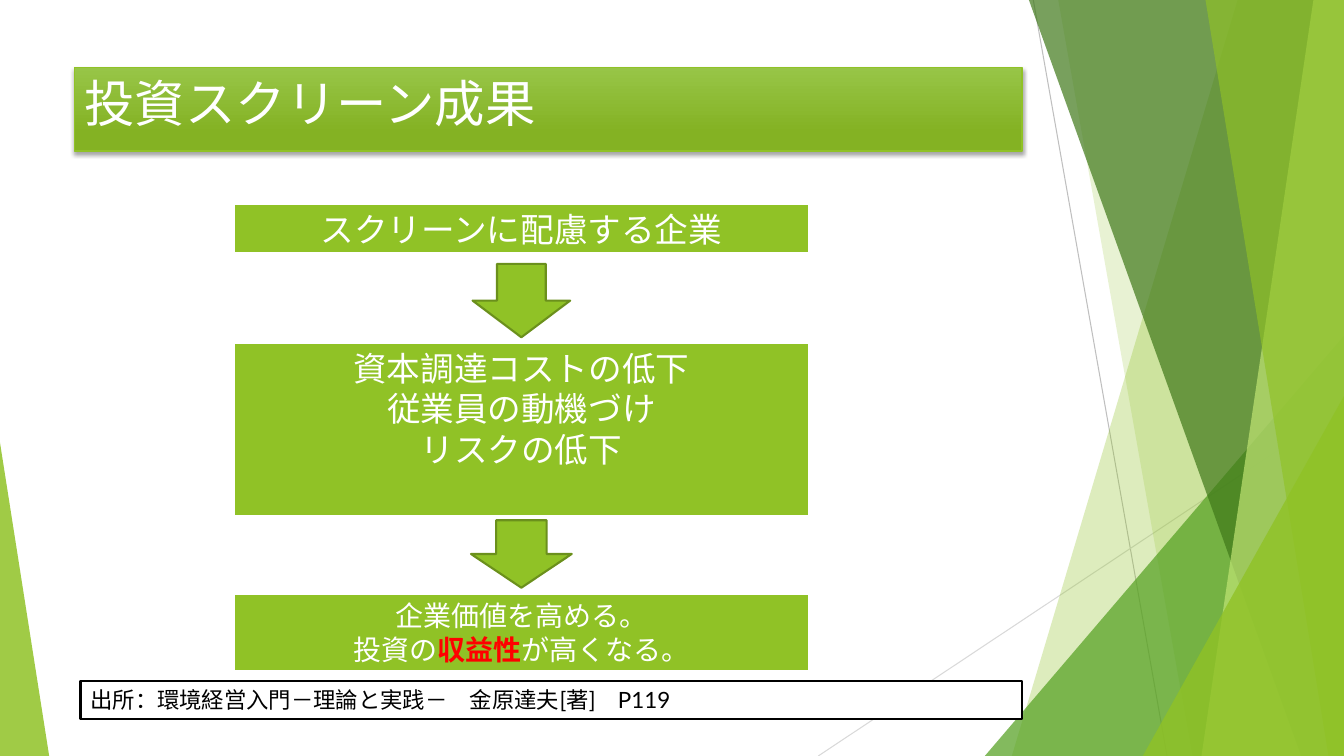
from dataclasses import dataclass

from lxml import etree
from pptx import Presentation
from pptx import util as u
from pptx.dml.color import RGBColor
from pptx.enum import shapes, text
from pptx.oxml import ns

WIDE, HIGH = 33.87, 19.05
KINDS = shapes.MSO_SHAPE
LEFT, MID = text.PP_ALIGN.LEFT, text.PP_ALIGN.CENTER


@dataclass(frozen=True)
class Theme:
    font: str = "Lato"
    lime: str = "90C226"
    pale: str = "C0E474"
    leaf: str = "54A021"
    moss: str = "3F7819"
    edge: str = "6B901C"
    light: str = "97C547"
    deep: str = "84B223"
    white: str = "FFFFFF"
    black: str = "000000"
    red: str = "FF0000"
    gray: str = "BFBFBF"
    mist: str = "D9D9D9"
    head: int = 36
    body: int = 24
    small: int = 20
    note: int = 16


def add(parent, tag, **attrs):
    node = etree.SubElement(parent, ns.qn(tag))
    for name, value in attrs.items():
        node.set(name, str(value))
    return node


def write(para, words, size, color, font, bold=False):
    run = para.add_run()
    run.text = words
    run.font.size = u.Pt(size)
    run.font.name = font
    run.font.bold = bold
    run.font.color.rgb = RGBColor.from_string(color)


class Deck:
    def __init__(self, theme):
        self.theme = theme
        self.file = Presentation()
        self.file.slide_width = u.Cm(WIDE)
        self.file.slide_height = u.Cm(HIGH)
        self.slide = self.file.slides.add_slide(self.file.slide_layouts[6])

    def paint(self, item, fill, line=None, width=1, alpha=None):
        item.shadow.inherit = False
        item.fill.solid()
        item.fill.fore_color.rgb = RGBColor.from_string(fill)
        if alpha:
            tone = item.fill._xPr.find(".//" + ns.qn("a:srgbClr"))
            add(tone, "a:alpha", val=alpha * 1000)
        if line:
            item.line.color.rgb = RGBColor.from_string(line)
            item.line.width = u.Pt(width)
        else:
            item.line.fill.background()
        return item

    def shape(self, kind, at, fill, **style):
        item = self.slide.shapes.add_shape(kind, *map(u.Cm, at))
        return self.paint(item, fill, **style)

    def band(self, top, base, fill, alpha):
        spots = [(WIDE, 0), (WIDE, HIGH), (base, HIGH)]
        form = self.slide.shapes.build_freeform(u.Cm(top), 0)
        form.add_line_segments([(u.Cm(x), u.Cm(y)) for x, y in spots])
        self.paint(form.convert_to_shape(), fill, alpha=alpha)

    def wedge(self, at, tip, fill, alpha):
        item = self.shape(KINDS.ISOSCELES_TRIANGLE, at, fill, alpha=alpha)
        item.adjustments[0] = tip

    def line(self, ends, color):
        item = self.slide.shapes.add_connector(
            shapes.MSO_CONNECTOR.STRAIGHT, *map(u.Cm, ends))
        item.line.color.rgb = RGBColor.from_string(color)
        item.line.width = u.Pt(0.75)
        add(item._element.spPr, "a:effectLst")

    def box(self, at, rows, size, fill, line, width, color, align=MID):
        item = self.shape(KINDS.RECTANGLE, at, fill, line=line, width=width)
        frame = item.text_frame
        frame.word_wrap = True
        frame.vertical_anchor = text.MSO_ANCHOR.TOP
        for i, row in enumerate(rows):
            para = frame.add_paragraph() if i else frame.paragraphs[0]
            para.alignment = align
            for words, mark in row:
                write(para, words, size=size, color=mark or color,
                      font=self.theme.font, bold=bool(mark))
        return item

    def title(self, at, words):
        t = self.theme
        item = self.box(at, [[(words, None)]], t.head, t.lime, t.lime, 1,
                        t.white, LEFT)
        item.fill.gradient()
        item.fill.gradient_angle = 270
        stops = zip(item.fill.gradient_stops, (0, 0.78), (t.light, t.deep))
        for stop, place, color in stops:
            stop.position = place
            stop.color.rgb = RGBColor.from_string(color)
        effects = item._element.spPr.find(ns.qn("a:effectLst"))
        shade = add(effects, "a:outerShdw", blurRad=u.Pt(3), dist=u.Pt(2),
                    dir=5400000, rotWithShape=0)
        tone = add(shade, "a:srgbClr", val=t.black)
        add(tone, "a:alpha", val=35000)

    def step(self, top, high, rows, size):
        t = self.theme
        self.box((5.89, top, 14.5, high), rows, size, t.lime, t.white, 2,
                 t.white)

    def arrow(self, top, wide, high):
        t = self.theme
        self.shape(KINDS.DOWN_ARROW, (13.14 - wide / 2, top, wide, high),
                   t.lime, line=t.edge, width=1.5)


def main():
    t = Theme()
    deck = Deck(t)
    deck.line((26.04, 0, 29.41, HIGH), t.gray)
    deck.line((WIDE, 10.24, 20.62, HIGH), t.mist)
    deck.band(31.19, 25.5, t.lime, 30)
    deck.band(26.67, 30.05, t.lime, 20)
    deck.wedge((24.82, 8.46, 9.05, 10.59), 1, t.leaf, 72)
    deck.band(25.93, 32.79, t.moss, 70)
    deck.band(33.1, 30.28, t.pale, 70)
    deck.band(30.38, 33.48, t.lime, 65)
    deck.wedge((28.8, 9.98, 5.07, 9.07), 1, t.lime, 80)
    deck.wedge((0, 11.15, 1.24, 7.9), 0, t.lime, 85)

    deck.title((1.88, 1.7, 23.88, 2.11), "投資スクリーン成果")
    deck.step(5.13, 1.27, [[("スクリーンに配慮する企業", None)]], t.body)
    deck.arrow(6.65, 2.46, 1.85)
    gains = ("資本調達コストの低下", "従業員の動機づけ", "リスクの低下")
    deck.step(8.64, 4.37, [[(gain, None)] for gain in gains], t.body)
    deck.arrow(13.11, 2.54, 1.7)
    deck.step(14.96, 1.96, [
        [("企業価値を高める。", None)],
        [("投資の", None), ("収益性", t.red), ("が高くなる。", None)],
    ], t.small)
    source = "出所：環境経営入門－理論と実践－　金原達夫[著]　P119"
    deck.box((2.03, 17.17, 23.72, 0.94), [[(source, None)]], t.note,
             t.white, t.black, 1.5, t.black, LEFT)
    deck.file.save("out.pptx")


if __name__ == "__main__":
    main()
